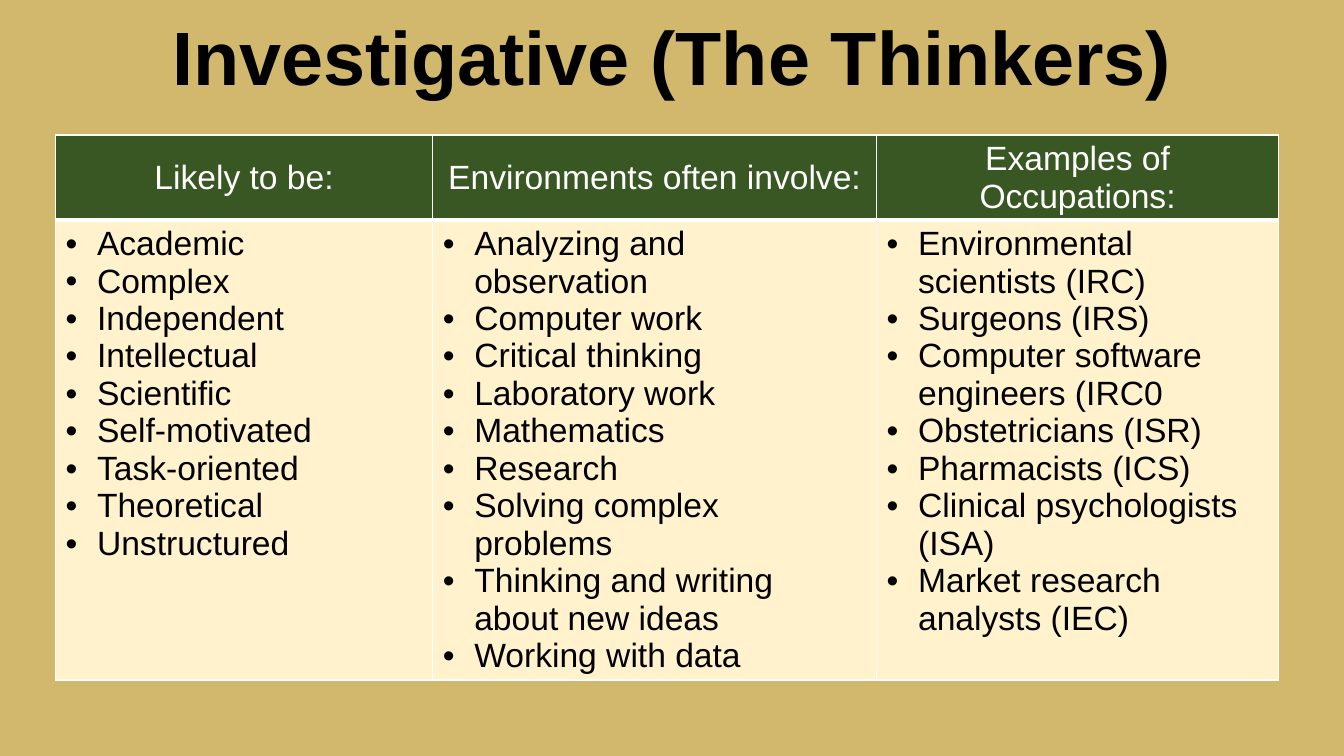
from dataclasses import dataclass

from lxml import etree
from pptx import Presentation
from pptx import util as u
from pptx.dml import color
from pptx.enum import text
from pptx.oxml import ns


@dataclass(frozen=True)
class Theme:
    """Colours, font and type sizes of the deck."""
    ground: str = "D1B86C"
    header: str = "385723"
    body: str = "FFF2CC"
    light: str = "FFFFFF"
    dark: str = "000000"
    font: str = "Arial"
    title_size: float = 54
    table_size: float = 24
    thin: float = 1
    thick: float = 3


class Page:
    """One slide together with its style."""

    def __init__(self, deck, theme):
        """Add a title-only slide with a plain background."""
        self.theme = theme
        self.slide = deck.slides.add_slide(deck.slide_layouts[5])
        self.paint(self.slide.background.fill, theme.ground)

    def paint(self, fill, shade):
        """Fill with one solid colour."""
        fill.solid()
        fill.fore_color.rgb = color.RGBColor.from_string(shade)

    def style(self, para, size, shade, bold=False):
        """Set the font of a paragraph."""
        para.font.name = self.theme.font
        para.font.size = u.Pt(size)
        para.font.bold = bold
        para.font.color.rgb = color.RGBColor.from_string(shade)

    def title(self, words, left, top, width, height):
        """Place and format the title placeholder."""
        box = self.slide.shapes.title
        box.left, box.top = u.Pt(left), u.Pt(top)
        box.width, box.height = u.Pt(width), u.Pt(height)
        frame = box.text_frame
        frame.text = words
        frame.word_wrap = True
        frame.auto_size = text.MSO_AUTO_SIZE.NONE
        frame.vertical_anchor = text.MSO_ANCHOR.BOTTOM
        para = frame.paragraphs[0]
        para.alignment = text.PP_ALIGN.CENTER
        para.line_spacing = 0.9
        self.style(para, self.theme.title_size, self.theme.dark, bold=True)

    def borders(self, cell, bottom):
        """Draw light lines around a cell, the bottom one in its own width."""
        properties = cell._tc.get_or_add_tcPr()
        widths = {"lnL": self.theme.thin, "lnR": self.theme.thin,
                  "lnT": self.theme.thin, "lnB": bottom}
        for place, (side, width) in enumerate(widths.items()):
            line = etree.Element(ns.qn(f"a:{side}"), w=str(u.Pt(width)))
            fill = etree.SubElement(line, ns.qn("a:solidFill"))
            etree.SubElement(fill, ns.qn("a:srgbClr"), val=self.theme.light)
            properties.insert(place, line)

    def bullet(self, para, indent):
        """Give a paragraph a hanging bullet."""
        properties = para._p.get_or_add_pPr()
        properties.set("marL", str(u.Pt(indent)))
        properties.set("indent", str(-u.Pt(indent)))
        face = etree.Element(ns.qn("a:buFont"), typeface=self.theme.font)
        mark = etree.Element(ns.qn("a:buChar"), char="•")
        properties.insert(0, face)
        properties.insert(1, mark)

    def header_cell(self, cell, heading):
        """Write a centred column heading."""
        cell.text = heading
        cell.vertical_anchor = text.MSO_ANCHOR.MIDDLE
        para = cell.text_frame.paragraphs[0]
        para.alignment = text.PP_ALIGN.CENTER
        self.style(para, self.theme.table_size, self.theme.light)
        self.paint(cell.fill, self.theme.header)
        self.borders(cell, self.theme.thick)

    def list_cell(self, cell, items):
        """Write a bulleted list."""
        cell.text = "\n".join(items)
        for para in cell.text_frame.paragraphs:
            self.style(para, self.theme.table_size, self.theme.dark)
            self.bullet(para, indent=22.5)
        self.paint(cell.fill, self.theme.body)
        self.borders(cell, self.theme.thin)

    def table(self, columns, left, top, widths, heights):
        """Add a table with one heading and one list in each column."""
        table = self.slide.shapes.add_table(
            len(heights), len(widths), u.Pt(left), u.Pt(top),
            u.Pt(sum(widths)), u.Pt(sum(heights))).table
        for row, height in zip(table.rows, heights):
            row.height = u.Pt(height)
        for index, (heading, items) in enumerate(columns.items()):
            table.columns[index].width = u.Pt(widths[index])
            self.header_cell(table.cell(0, index), heading)
            self.list_cell(table.cell(1, index), items)


COLUMNS = {
    "Likely to be:": [
        "Academic", "Complex", "Independent", "Intellectual", "Scientific",
        "Self-motivated", "Task-oriented", "Theoretical", "Unstructured",
    ],
    "Environments often involve:": [
        "Analyzing and observation", "Computer work", "Critical thinking",
        "Laboratory work", "Mathematics", "Research",
        "Solving complex problems", "Thinking and writing about new ideas",
        "Working with data",
    ],
    "Examples of Occupations:": [
        "Environmental scientists (IRC)", "Surgeons (IRS)",
        "Computer software engineers (IRC0", "Obstetricians (ISR)",
        "Pharmacists (ICS)", "Clinical psychologists (ISA)",
        "Market research analysts (IEC)",
    ],
}


def main():
    """Build the slide and save the deck."""
    deck = Presentation()
    deck.slide_width, deck.slide_height = u.Pt(960), u.Pt(540)
    page = Page(deck, Theme())
    page.title("Investigative (The Thinkers)", 0, 12.25, 960, 64)
    page.table(COLUMNS, 39.6, 96.5, widths=[269.5, 317, 287.25],
               heights=[60.5, 328.5])
    deck.save("out.pptx")


if __name__ == "__main__":
    main()
